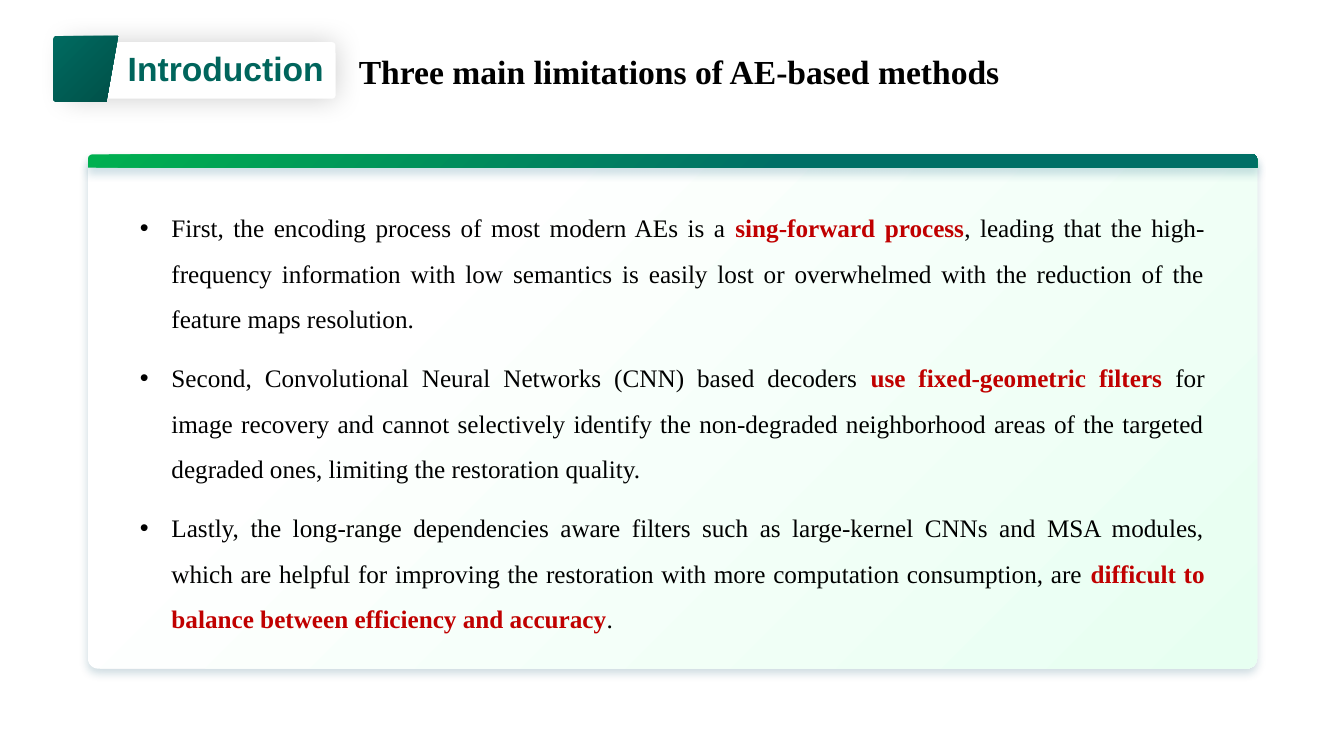
from lxml import etree
from pptx import Presentation
from pptx.dml.color import RGBColor
from pptx.enum.shapes import MSO_SHAPE
from pptx.enum.text import MSO_ANCHOR, MSO_AUTO_SIZE, PP_ALIGN
from pptx.oxml.ns import qn
from pptx.util import Pt

ROUNDED = MSO_SHAPE.ROUNDED_RECTANGLE
TOP_ROUNDED = MSO_SHAPE.ROUND_2_SAME_RECTANGLE
LEFT, JUSTIFY = PP_ALIGN.LEFT, PP_ALIGN.JUSTIFY
TOP, NO_AUTOFIT = MSO_ANCHOR.TOP, MSO_AUTO_SIZE.NONE

WHITE = RGBColor(0xFF, 0xFF, 0xFF)
BLACK = RGBColor(0x00, 0x00, 0x00)
RED = RGBColor(0xC0, 0x00, 0x00)
MINT = RGBColor(0xE7, 0xFF, 0xF1)
GREEN = RGBColor(0x00, 0xB0, 0x50)
TEAL = RGBColor(0x00, 0x6F, 0x66)
TAB_LIGHT = RGBColor(0x00, 0x6A, 0x60)
TAB_DARK = RGBColor(0x00, 0x50, 0x48)
LABEL_TEAL = RGBColor(0x00, 0x65, 0x5C)
PANEL_SHADOW = RGBColor(0x0F, 0x52, 0x6C)
BAR_SHADOW = RGBColor(0x11, 0x65, 0x84)

SERIF = "Times New Roman"
INDENT = Pt(22.5)


def style_shape(shape, stops, shadow=None):
    """Fill with (position, colour) stops; shadow is (colour, blur, distance)."""
    shape.line.fill.background()
    if len(stops) == 1:
        shape.fill.solid()
        shape.fill.fore_color.rgb = stops[0][1]
    else:
        shape.fill.gradient()
        shape.fill.gradient_angle = 315
        for gradient_stop, (position, color) in zip(shape.fill.gradient_stops, stops):
            gradient_stop.position = position
            gradient_stop.color.rgb = color
    shape.shadow.inherit = False
    if shadow:
        color, blur, distance = shadow
        effects = shape._element.spPr.find(qn("a:effectLst"))
        outer = etree.SubElement(effects, qn("a:outerShdw"), blurRad=str(Pt(blur)),
                                 dist=str(Pt(distance)), dir="5400000",
                                 algn="ctr", rotWithShape="0")
        shade = etree.SubElement(outer, qn("a:srgbClr"), val=str(color))
        etree.SubElement(shade, qn("a:alpha"), val="20000")


def write_heading(shape, text, font_name, color):
    text_frame = shape.text_frame
    text_frame.text = text
    text_frame.word_wrap = True
    text_frame.auto_size = NO_AUTOFIT
    text_frame.vertical_anchor = TOP
    paragraph = text_frame.paragraphs[0]
    paragraph.alignment = LEFT
    font = paragraph.runs[0].font
    font.name, font.size, font.bold = font_name, Pt(24), True
    font.color.rgb = color


presentation = Presentation()
presentation.slide_width, presentation.slide_height = Pt(960), Pt(540)
slide = presentation.slides.add_slide(presentation.slide_layouts[5])
shapes = slide.shapes

# Content panel with its green top bar
panel = shapes.add_shape(ROUNDED, Pt(62.8), Pt(110.2), Pt(835.2), Pt(367.4))
panel.adjustments[0] = 0.02
style_shape(panel, [(0.25, WHITE), (1, MINT)], (PANEL_SHADOW, 6, 4))

bar = shapes.add_shape(TOP_ROUNDED, Pt(62.8), Pt(110.2), Pt(835.2), Pt(9.6))
bar.adjustments[0] = 0.349
bar.adjustments[1] = 0
style_shape(bar, [(0, GREEN), (0.6, TEAL)], (BAR_SHADOW, 6, 4))

# Section label: white plate and slanted tab with rounded left corners
plate = shapes.add_shape(ROUNDED, Pt(47.5), Pt(30.2), Pt(192.2), Pt(40.3))
plate.adjustments[0] = 0.057
style_shape(plate, [(0, WHITE)], (BLACK, 20, 0))

tab_outline = [(84.4, 25.7), (76, 72.7), (39.8, 72.7), (38.6, 72.1), (38, 70.7),
               (38, 27.7), (38.6, 26.3), (39.8, 25.7)]
points = [(Pt(x), Pt(y)) for x, y in tab_outline]
builder = shapes.build_freeform(*points[0])
builder.add_line_segments(points[1:], close=True)
style_shape(builder.convert_to_shape(), [(0, TAB_LIGHT), (1, TAB_DARK)])

section = shapes.add_textbox(Pt(84.2), Pt(31), Pt(155.5), Pt(36))
write_heading(section, "Introduction", "Arial", LABEL_TEAL)

# Slide title
title = shapes.title
title.left, title.top, title.width, title.height = Pt(249.1), Pt(32.4), Pt(476), Pt(36)
write_heading(title, "Three main limitations of AE-based methods", SERIF, BLACK)

# Limitations: plain text, emphasised text, plain text
limitations = [
    ("First, the encoding process of most modern AEs is a ",
     "sing-forward process",
     ", leading that the high-frequency information with low semantics is easily lost "
     "or overwhelmed with the reduction of the feature maps resolution."),
    ("Second, Convolutional Neural Networks (CNN) based decoders ",
     "use fixed-geometric filters ",
     "for image recovery and cannot selectively identify the non-degraded neighborhood "
     "areas of the targeted degraded ones, limiting the restoration quality."),
    ("Lastly, the long-range dependencies aware filters such as large-kernel CNNs and "
     "MSA modules, which are helpful for improving the restoration with more "
     "computation consumption, are ",
     "difficult to balance between efficiency and accuracy",
     "."),
]
body = shapes.add_textbox(Pt(92.9), Pt(137.5), Pt(774.7), Pt(318.2))
text_frame = body.text_frame
text_frame.word_wrap = True
for index, parts in enumerate(limitations):
    paragraph = text_frame.add_paragraph() if index else text_frame.paragraphs[0]
    paragraph.alignment = JUSTIFY
    paragraph.line_spacing = 1.5
    paragraph.space_after = Pt(10)
    properties = paragraph._p.get_or_add_pPr()
    properties.set("marL", str(INDENT))
    properties.set("indent", str(-INDENT))
    etree.SubElement(properties, qn("a:buFont"), typeface="Arial")
    etree.SubElement(properties, qn("a:buChar"), char="•")
    for part_index, part in enumerate(parts):
        emphasised = part_index == 1
        run = paragraph.add_run()
        run.text = part
        run.font.name, run.font.size = SERIF, Pt(18)
        run.font.bold = emphasised
        run.font.color.rgb = RED if emphasised else BLACK

presentation.save("out.pptx")
